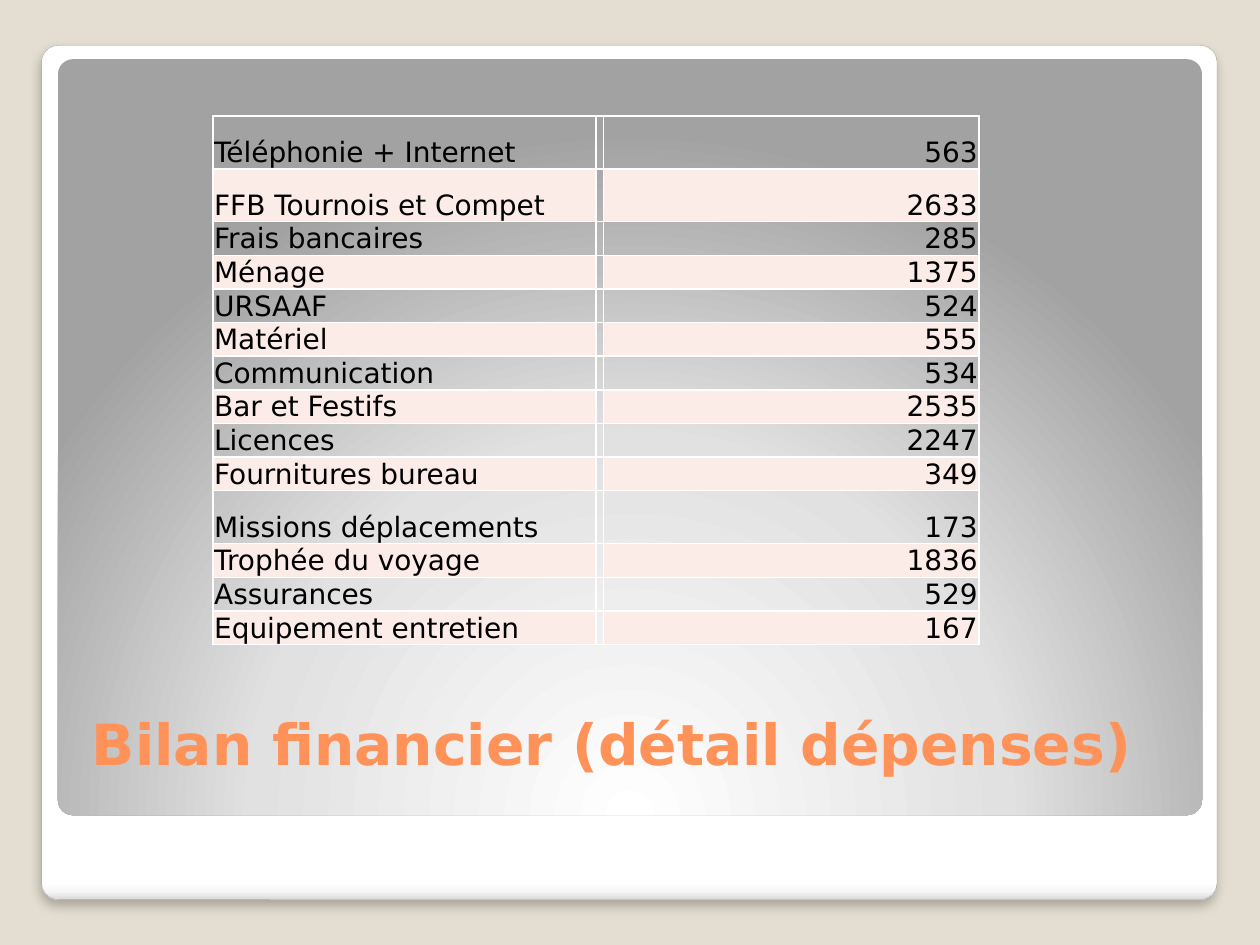
from pptx import Presentation
from pptx.dml.color import RGBColor as RGB
from pptx.enum.shapes import MSO_SHAPE as Shape
from pptx.enum.text import MSO_ANCHOR as Anchor, PP_ALIGN as Align
from pptx.oxml import parse_xml
from pptx.oxml.ns import nsdecls
from pptx.util import Inches, Pt

FONT = "DejaVu Sans"
BLACK = RGB(0x00, 0x00, 0x00)
WHITE = RGB(0xFF, 0xFF, 0xFF)
SAND = RGB(0xE3, 0xDE, 0xD1)
ORANGE = RGB(0xFF, 0x92, 0x58)
BLUSH = RGB(0xFC, 0xEC, 0xE7)
EDGE = RGB(0xA4, 0xA4, 0xA4)
CARD = [(0, WHITE), (98, WHITE), (99, RGB(0xF7, 0xF7, 0xF7)), (100, RGB(0xDA, 0xDA, 0xDA))]
GLOW = [(0, WHITE), (55, RGB(0xE1, 0xE1, 0xE1)), (100, RGB(0xA2, 0xA2, 0xA2))]
DOWN = '<a:lin ang="5400000" scaled="0"/>'
ROUND = ('<a:path path="circle"><a:fillToRect l="50000" t="175000" '
         'r="50000" b="-75000"/></a:path>')

COLS = [30.4, 0.4, 29.8]
LOW, TALL = 2.6, 4.2
COSTS = [
    ("Téléphonie + Internet", 563, TALL),
    ("FFB Tournois et Compet", 2633, TALL),
    ("Frais bancaires", 285, LOW),
    ("Ménage", 1375, LOW),
    ("URSAAF", 524, LOW),
    ("Matériel", 555, LOW),
    ("Communication", 534, LOW),
    ("Bar et Festifs", 2535, LOW),
    ("Licences", 2247, LOW),
    ("Fournitures bureau", 349, LOW),
    ("Missions déplacements", 173, TALL),
    ("Trophée du voyage", 1836, LOW),
    ("Assurances", 529, LOW),
    ("Equipement entretien", 167, LOW),
]


def unit(n):
    """Length of n grid steps; the slide is 100 columns by 75 rows."""
    return Inches(n / 10)


def xml(tag, body, attrs=""):
    return parse_xml(f"<a:{tag} {nsdecls('a')} {attrs}>{body}</a:{tag}>")


def tint(color, more=""):
    return f'<a:srgbClr val="{color}">{more}</a:srgbClr>'


def write(frame, text, size=16, color=BLACK, bold=False, align=Align.LEFT):
    para = frame.paragraphs[0]
    para.alignment = align
    run = para.add_run()
    run.text = text
    font = run.font
    font.name, font.size, font.bold = FONT, Pt(size), bold
    font.color.rgb = color


class Page:
    def __init__(self, deck):
        self.slide = deck.slides.add_slide(deck.slide_layouts[5])
        self.shapes = self.slide.shapes
        fill = self.slide.background.fill
        fill.solid()
        fill.fore_color.rgb = SAND

    def panel(self, box, stops, way, edge=None, shade=False):
        shape = self.shapes.add_shape(Shape.ROUNDED_RECTANGLE, *map(unit, box))
        shape.adjustments[0] = 0.02
        shape.shadow.inherit = False
        if edge:
            shape.line.color.rgb = edge
            shape.line.width = Pt(0.16)
        else:
            shape.line.fill.background()
        marks = "".join(f'<a:gs pos="{at * 1000}">{tint(c)}</a:gs>' for at, c in stops)
        props = shape._element.spPr
        props.prstGeom.addnext(xml("gradFill", f"<a:gsLst>{marks}</a:gsLst>{way}"))
        if shade:
            props.find("{*}effectLst").append(xml(
                "outerShdw", tint(BLACK, '<a:alpha val="25000"/>'),
                f'blurRad="{Pt(6)}" dist="{Pt(4)}" dir="5400000" rotWithShape="0"'))

    def title(self, box, text):
        head = self.shapes.title
        head.left, head.top, head.width, head.height = map(unit, box)
        head.text_frame.word_wrap = True
        head.text_frame.vertical_anchor = Anchor.BOTTOM
        write(head.text_frame, text, size=32.4, color=ORANGE, bold=True)
        self.shapes._spTree.append(head._element)  # bring above the panels

    def cell(self, cell, fill=None):
        """Set margins, fill and white borders."""
        cell.margin_left = cell.margin_right = cell.margin_top = Inches(0.01)
        cell.margin_bottom = 0
        cell.vertical_anchor = Anchor.BOTTOM
        if fill:
            cell.fill.solid()
            cell.fill.fore_color.rgb = fill
        else:
            cell.fill.background()
        props = cell._tc.get_or_add_tcPr()
        for i, side in enumerate("LRTB"):
            line = xml(f"ln{side}", f"<a:solidFill>{tint(WHITE)}</a:solidFill>",
                       f'w="{Pt(1)}"')
            props.insert(i, line)

    def table(self, left, top, cols, data):
        high = sum(row[-1] for row in data)
        box = map(unit, (left, top, sum(cols), high))
        table = self.shapes.add_table(len(data), len(cols), *box).table
        table.first_row = table.horz_banding = False
        for col, wide in zip(table.columns, cols):
            col.width = unit(wide)
        for i, (name, cost, tall) in enumerate(data):
            table.rows[i].height = unit(tall)
            label, gap, sum_cell = (table.cell(i, j) for j in range(3))
            band = BLUSH if i % 2 else None
            self.cell(label, band)
            self.cell(gap)
            self.cell(sum_cell, band)
            write(label.text_frame, name)
            write(sum_cell.text_frame, str(cost), align=Align.RIGHT)
            gap.text_frame.paragraphs[0]._p.append(xml("endParaRPr", "", 'sz="800"'))


def main():
    deck = Presentation()
    deck.slide_width, deck.slide_height = unit(100), unit(75)
    page = Page(deck)
    page.panel((3.3, 3.6, 93.3, 67.8), CARD, DOWN, edge=EDGE, shade=True)
    page.panel((4.6, 4.7, 90.8, 60), GLOW, ROUND)
    page.title((6.3, 52.1, 89.5, 10.1), "Bilan financier (détail dépenses)")
    page.table(16.9, 9.2, COLS, COSTS)
    deck.save("out.pptx")


if __name__ == "__main__":
    main()
